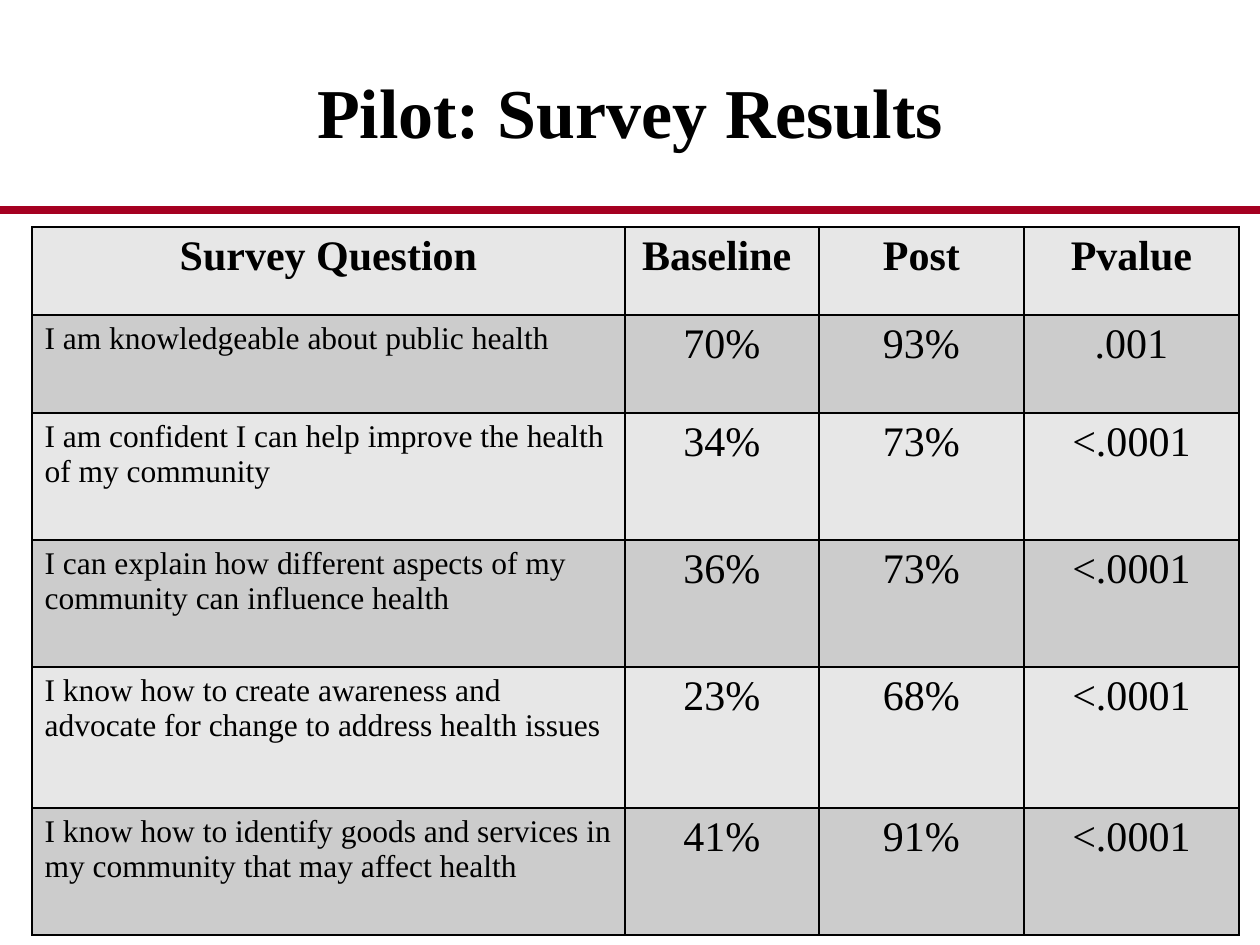
from dataclasses import dataclass

import lxml.etree
import pptx
import pptx.dml.color
import pptx.enum.shapes
import pptx.enum.text
import pptx.oxml.ns
import pptx.util

PX_PER_INCH = 126
ALIGN = pptx.enum.text.PP_ALIGN


@dataclass(frozen=True)
class Theme:
    font: str = "Times New Roman"
    ink: str = "000000"
    rule: str = "A50021"
    light_row: str = "E7E7E7"
    dark_row: str = "CCCCCC"
    title_size: int = 40
    value_size: int = 24
    question_size: int = 18
    rule_width: float = 4.5
    border_width: float = 1


@dataclass(frozen=True)
class SurveyRow:
    question: str
    baseline: str
    post: str
    p_value: str
    height: int

    def texts(self) -> tuple[str, str, str, str]:
        return self.question, self.baseline, self.post, self.p_value


THEME = Theme()
COLUMN_WIDTHS = (593, 194, 205, 215)
ROWS = (
    SurveyRow("Survey Question", "Baseline ", "Post", "Pvalue", 88),
    SurveyRow("I am knowledgeable about public health", "70%", "93%", ".001", 98),
    SurveyRow("I am confident I can help improve the health of my community",
              "34%", "73%", "<.0001", 127),
    SurveyRow("I can explain how different aspects of my community can influence health",
              "36%", "73%", "<.0001", 127),
    SurveyRow("I know how to create awareness and advocate for change to address health issues",
              "23%", "68%", "<.0001", 141),
    SurveyRow("I know how to identify goods and services in my community that may affect health",
              "41%", "91%", "<.0001", 127),
)


def px(length: int) -> int:
    return round(length * pptx.util.Inches(1) / PX_PER_INCH)


def color(code: str) -> pptx.dml.color.RGBColor:
    return pptx.dml.color.RGBColor.from_string(code)


def write(frame, text: str, size: int, bold: bool, align) -> None:
    frame.text = text
    para = frame.paragraphs[0]
    para.alignment = align
    font = para.runs[0].font
    font.name, font.size, font.bold = THEME.font, pptx.util.Pt(size), bold
    font.color.rgb = color(THEME.ink)


def add_borders(cell) -> None:
    properties = cell._tc.get_or_add_tcPr()
    qn = pptx.oxml.ns.qn
    for side in ("a:lnL", "a:lnR", "a:lnT", "a:lnB"):
        line = lxml.etree.SubElement(properties, qn(side),
                                     w=str(pptx.util.Pt(THEME.border_width)))
        fill = lxml.etree.SubElement(line, qn("a:solidFill"))
        lxml.etree.SubElement(fill, qn("a:srgbClr"), val=THEME.ink)


def add_title(page, text: str) -> None:
    title = page.shapes.title
    title.left, title.top, title.width, title.height = px(63), px(32), px(1134), px(157)
    write(title.text_frame, text, THEME.title_size, True, ALIGN.CENTER)
    title.text_frame.vertical_anchor = pptx.enum.text.MSO_ANCHOR.MIDDLE


def add_survey_table(page, rows: tuple[SurveyRow, ...], left: int, top: int) -> None:
    table = page.shapes.add_table(
        len(rows), len(COLUMN_WIDTHS), px(left), px(top),
        px(sum(COLUMN_WIDTHS)), px(sum(row.height for row in rows))).table
    for column, width in zip(table.columns, COLUMN_WIDTHS):
        column.width = px(width)
    for r, row in enumerate(rows):
        table.rows[r].height = px(row.height)
        for c, text in enumerate(row.texts()):
            cell = table.cell(r, c)
            is_question = r > 0 and c == 0
            write(cell.text_frame, text,
                  THEME.question_size if is_question else THEME.value_size,
                  r == 0, ALIGN.LEFT if is_question else ALIGN.CENTER)
            add_borders(cell)
            cell.fill.solid()
            cell.fill.fore_color.rgb = color(THEME.dark_row if r % 2 else THEME.light_row)


def add_rule(page, y: int, width: int) -> None:
    rule = page.shapes.add_connector(
        pptx.enum.shapes.MSO_CONNECTOR.STRAIGHT, 0, px(y), px(width), px(y))
    rule.line.color.rgb = color(THEME.rule)
    rule.line.width = pptx.util.Pt(THEME.rule_width)
    lxml.etree.SubElement(rule._element.spPr, pptx.oxml.ns.qn("a:effectLst"))


def main() -> None:
    deck = pptx.Presentation()
    deck.slide_width, deck.slide_height = px(1260), px(945)
    page = deck.slides.add_slide(deck.slide_layouts.get_by_name("Title Only"))

    # Heading
    add_title(page, "Pilot: Survey Results")
    # Results table
    add_survey_table(page, ROWS, left=32, top=227)
    # Red rule under the heading
    add_rule(page, y=210, width=1260)

    deck.save("out.pptx")


if __name__ == "__main__":
    main()
